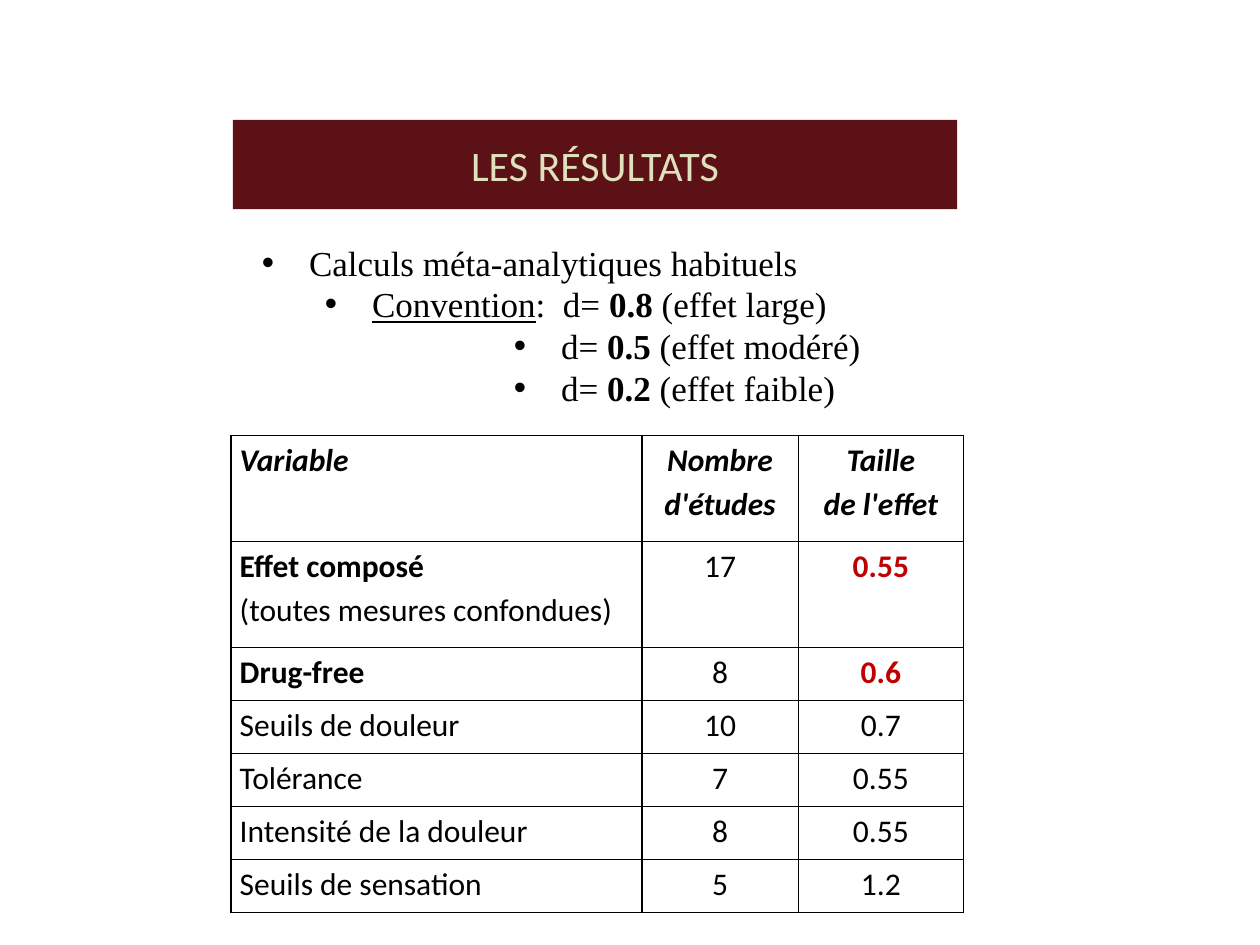
from dataclasses import dataclass

from lxml.etree import SubElement
from pptx import Presentation
from pptx.dml.color import RGBColor
from pptx.enum.shapes import MSO_SHAPE as Shape
from pptx.enum.text import MSO_ANCHOR as Anchor, PP_ALIGN as Align
from pptx.oxml.ns import qn
from pptx.util import Pt


@dataclass(frozen=True)
class Theme:
    banner: str = "5B1115"
    banner_text: str = "DEE1BB"
    ink: str = "000000"
    accent: str = "C00000"
    sans: str = "Calibri"
    serif: str = "Times New Roman"
    title_size: float = 24
    list_size: float = 20
    table_size: float = 18


THEME = Theme()


def add_text(para, text, *, size, face, color=THEME.ink, bold=False,
             italic=False, underline=False):
    span = para.add_run()
    span.text = text
    font = span.font
    font.size, font.name = Pt(size), face
    font.bold, font.italic, font.underline = bold, italic, underline
    font.color.rgb = RGBColor.from_string(color)


def add_paragraph(frame, index):
    return frame.paragraphs[0] if index == 0 else frame.add_paragraph()


def add_banner(page, box, text):
    banner = page.shapes.add_shape(Shape.RECTANGLE, *map(Pt, box))
    banner.shadow.inherit = False
    banner.fill.solid()
    banner.fill.fore_color.rgb = RGBColor.from_string(THEME.banner)
    banner.line.fill.background()
    frame = banner.text_frame
    frame.vertical_anchor = Anchor.MIDDLE
    para = frame.paragraphs[0]
    para.alignment = Align.CENTER
    add_text(para, text, size=THEME.title_size, face=THEME.sans,
             color=THEME.banner_text)


def add_bullet(para, indent, hang=27):
    props = para._p.get_or_add_pPr()
    props.set("marL", str(Pt(indent)))
    props.set("indent", str(-Pt(hang)))
    SubElement(props, qn("a:buFont")).set("typeface", "Arial")
    SubElement(props, qn("a:buChar")).set("char", "•")


def add_bullet_list(page, box, items):
    """Each item is (level, [(text, format), ...])."""
    frame = page.shapes.add_textbox(*map(Pt, box)).text_frame
    frame.word_wrap = True
    for index, (level, spans) in enumerate(items):
        para = add_paragraph(frame, index)
        add_bullet(para, 27 + 36 * level)
        para.level = level
        para.line_spacing = 0.8
        if index:
            para.space_before = Pt(4.6)
        for text, style in spans:
            add_text(para, text, size=THEME.list_size, face=THEME.serif, **style)


def add_borders(cell):
    props = cell._tc.get_or_add_tcPr()
    for side in ("lnL", "lnR", "lnT", "lnB"):
        line = SubElement(props, qn(f"a:{side}"), w=str(Pt(1)))
        fill = SubElement(line, qn("a:solidFill"))
        SubElement(fill, qn("a:srgbClr"), val=THEME.ink)


def fill_cell(cell, lines, align):
    """Each line is (text, format)."""
    add_borders(cell)
    cell.fill.background()
    cell.margin_left = cell.margin_right = Pt(5)
    cell.margin_top = cell.margin_bottom = 0
    for index, (text, style) in enumerate(lines):
        para = add_paragraph(cell.text_frame, index)
        para.alignment = align
        para.line_spacing = 1.15
        add_text(para, text, size=THEME.table_size, face=THEME.sans, **style)


def add_results_table(page, box, widths, rows):
    left, top, width, height = box
    line_count = [max(map(len, row)) for row in rows]
    line_height = height / sum(line_count)
    table = page.shapes.add_table(len(rows), len(widths),
                                  *map(Pt, box)).table
    table.first_row = table.horz_banding = False
    for column, size in zip(table.columns, widths):
        column.width = Pt(size)
    for row, count, cells in zip(table.rows, line_count, rows):
        row.height = Pt(line_height * count)
        for index, lines in enumerate(cells):
            fill_cell(row.cells[index], lines,
                      Align.CENTER if index else Align.LEFT)


PLAIN = {}
BOLD = {"bold": True}
HEADING = {"bold": True, "italic": True}
KEY_VALUE = {"bold": True, "color": THEME.accent}

CONVENTIONS = [
    (0, [("Calculs méta-analytiques habituels", PLAIN)]),
    (1, [("Convention", {"underline": True}), (":  d= ", PLAIN),
         ("0.8", BOLD), (" (effet large)", PLAIN)]),
    (4, [("d= ", PLAIN), ("0.5", BOLD), (" (effet modéré)", PLAIN)]),
    (4, [("d= ", PLAIN), ("0.2", BOLD), (" (effet faible)", PLAIN)]),
]

HEADER = [
    [("Variable", HEADING)],
    [("Nombre", HEADING), ("d'études", HEADING)],
    [("Taille", HEADING), ("de l'effet", HEADING)],
]
SUMMARY = [
    [[("Effet composé", BOLD), ("(toutes mesures confondues)", PLAIN)],
     [("17", PLAIN)], [("0.55", KEY_VALUE)]],
    [[("Drug-free", BOLD)], [("8", PLAIN)], [("0.6", KEY_VALUE)]],
]
MEASURES = [
    ("Seuils de douleur", "10", "0.7"),
    ("Tolérance", "7", "0.55"),
    ("Intensité de la douleur", "8", "0.55"),
    ("Seuils de sensation", "5", "1.2"),
]


def main():
    deck = Presentation()
    deck.slide_width, deck.slide_height = Pt(720), Pt(540)
    page = deck.slides.add_slide(deck.slide_layouts[6])

    # Effect sizes
    measures = [[[(text, PLAIN)] for text in row] for row in MEASURES]
    add_results_table(page, (132, 249, 418.5, 272.5), (234.75, 89.5, 94.25),
                      [HEADER, *SUMMARY, *measures])
    # Title
    add_banner(page, (133, 68.5, 414, 51), "LES RÉSULTATS")
    # Conventions for d
    add_bullet_list(page, (142.5, 139, 394.5, 103), CONVENTIONS)

    deck.save("out.pptx")


if __name__ == "__main__":
    main()
